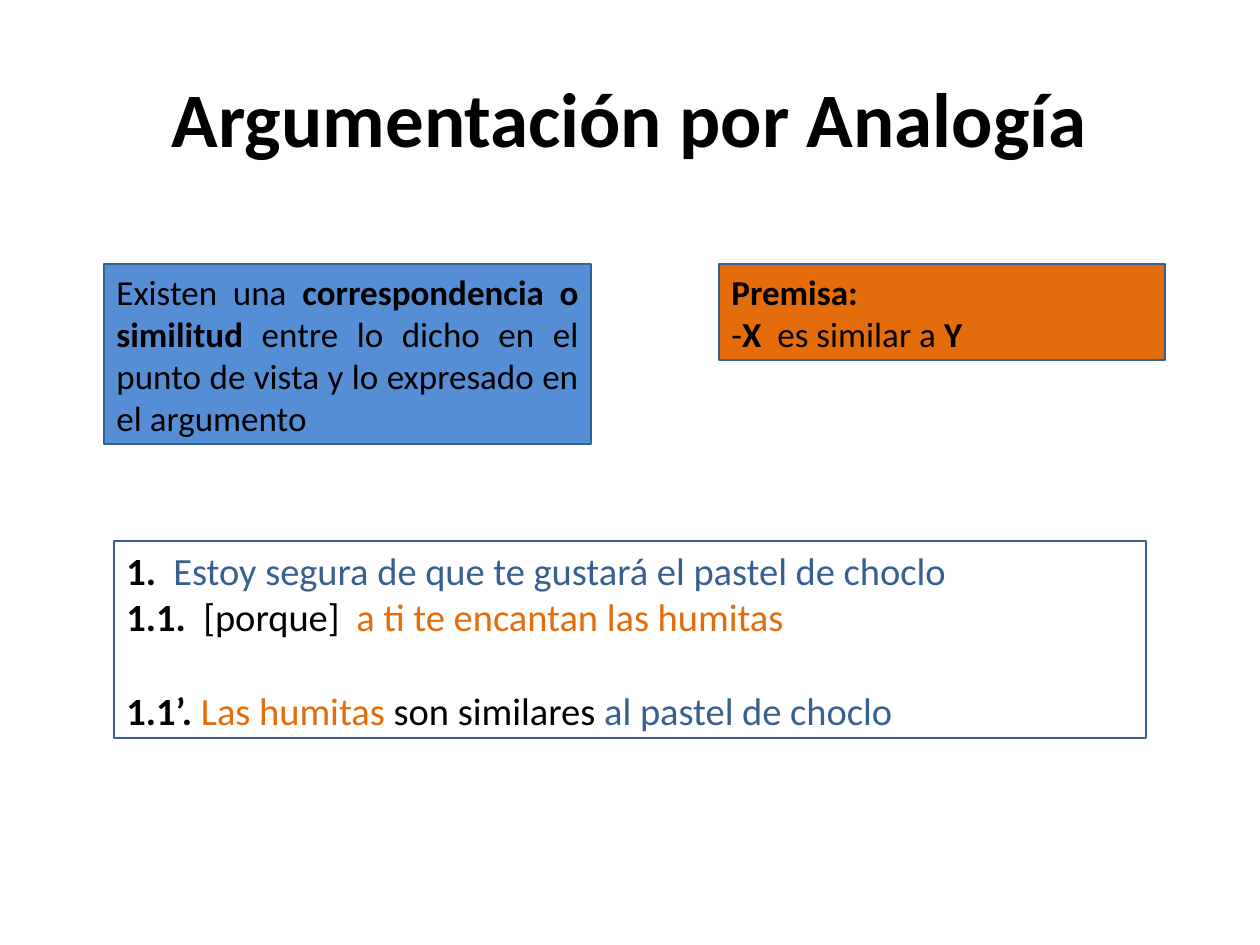
from lxml.etree import SubElement
from pptx import Presentation
from pptx.dml.color import RGBColor
from pptx.enum.shapes import MSO_SHAPE
from pptx.enum.text import MSO_ANCHOR, PP_ALIGN
from pptx.oxml.ns import qn
from pptx.util import Emu, Pt

BLACK = RGBColor(0x00, 0x00, 0x00)
WHITE = RGBColor(0xFF, 0xFF, 0xFF)
LIGHT_BLUE = RGBColor(0x55, 0x8E, 0xD5)
DARK_BLUE = RGBColor(0x37, 0x60, 0x92)
ORANGE = RGBColor(0xE4, 0x6C, 0x0A)
FONT = "Calibri"


def px(length):
    """Convert pixels, 126 to the inch, to EMU."""
    return Emu(round(length * 914400 / 126))


def add_run(paragraph, text, size, bold=False, color=BLACK):
    run = paragraph.add_run()
    run.text = text
    run.font.name = FONT
    run.font.size = Pt(size)
    run.font.bold = bold
    run.font.color.rgb = color


presentation = Presentation()
presentation.slide_width = px(1260)
presentation.slide_height = px(945)
slide = presentation.slides.add_slide(presentation.slide_layouts[5])

# Title
title = slide.shapes.title
title.left, title.top, title.width, title.height = px(63), px(38), px(1134), px(157)
title.text_frame.vertical_anchor = MSO_ANCHOR.MIDDLE
title_paragraph = title.text_frame.paragraphs[0]
title_paragraph.alignment = PP_ALIGN.CENTER
add_run(title_paragraph, "Argumentación por Analogía", 44, bold=True)

# Paragraphs of each box: tab stops in px, space before in points, runs
definition = [
    ([], 0, [
        ("Existen una ", False, BLACK),
        ("correspondencia o similitud", True, BLACK),
        (" entre lo dicho en el punto de vista y lo expresado en el argumento",
         False, BLACK),
    ]),
]
premise = [
    ([], 0, [("Premisa:", True, BLACK)]),
    ([46], 0, [
        ("-", False, BLACK),
        ("X\t", True, BLACK),
        ("es similar a ", False, BLACK),
        ("Y", True, BLACK),
    ]),
]
example = [
    ([47], 0, [
        ("1.\t", True, BLACK),
        ("Estoy segura de que te gustará el pastel de choclo", False, DARK_BLUE),
    ]),
    ([77, 230], 0, [
        ("1.1.\t", True, BLACK),
        ("[porque]\t", False, BLACK),
        ("a ti te encantan las humitas", False, ORANGE),
    ]),
    ([], 27, [
        ("1.1’. ", True, BLACK),
        ("Las humitas ", False, ORANGE),
        ("son similares ", False, BLACK),
        ("al pastel de choclo", False, DARK_BLUE),
    ]),
]

# Boxes: position and size in px, fill, text size, paragraphs
boxes = [
    ((104, 264, 487, 180), LIGHT_BLUE, 20, definition),
    ((719, 264, 446, 96), ORANGE, 20, premise),
    ((114, 541, 1032, 197), WHITE, 22, example),
]
for bounds, fill, size, paragraphs in boxes:
    shape = slide.shapes.add_shape(MSO_SHAPE.RECTANGLE, *map(px, bounds))
    shape.shadow.inherit = False
    shape.fill.solid()
    shape.fill.fore_color.rgb = fill
    shape.line.color.rgb = DARK_BLUE
    shape.line.width = Pt(0.75)
    frame = shape.text_frame
    frame.word_wrap = True
    frame.vertical_anchor = MSO_ANCHOR.TOP

    for index, (tabs, space_before, runs) in enumerate(paragraphs):
        paragraph = frame.add_paragraph() if index else frame.paragraphs[0]
        paragraph.alignment = PP_ALIGN.JUSTIFY
        if tabs:
            properties = paragraph._p.get_or_add_pPr()
            tab_list = SubElement(properties, qn("a:tabLst"))
            for position in tabs:
                SubElement(tab_list, qn("a:tab"), pos=str(px(position)), algn="l")
        if space_before:
            paragraph.space_before = Pt(space_before)
        for text, bold, color in runs:
            add_run(paragraph, text, size, bold, color)

presentation.save("out.pptx")
